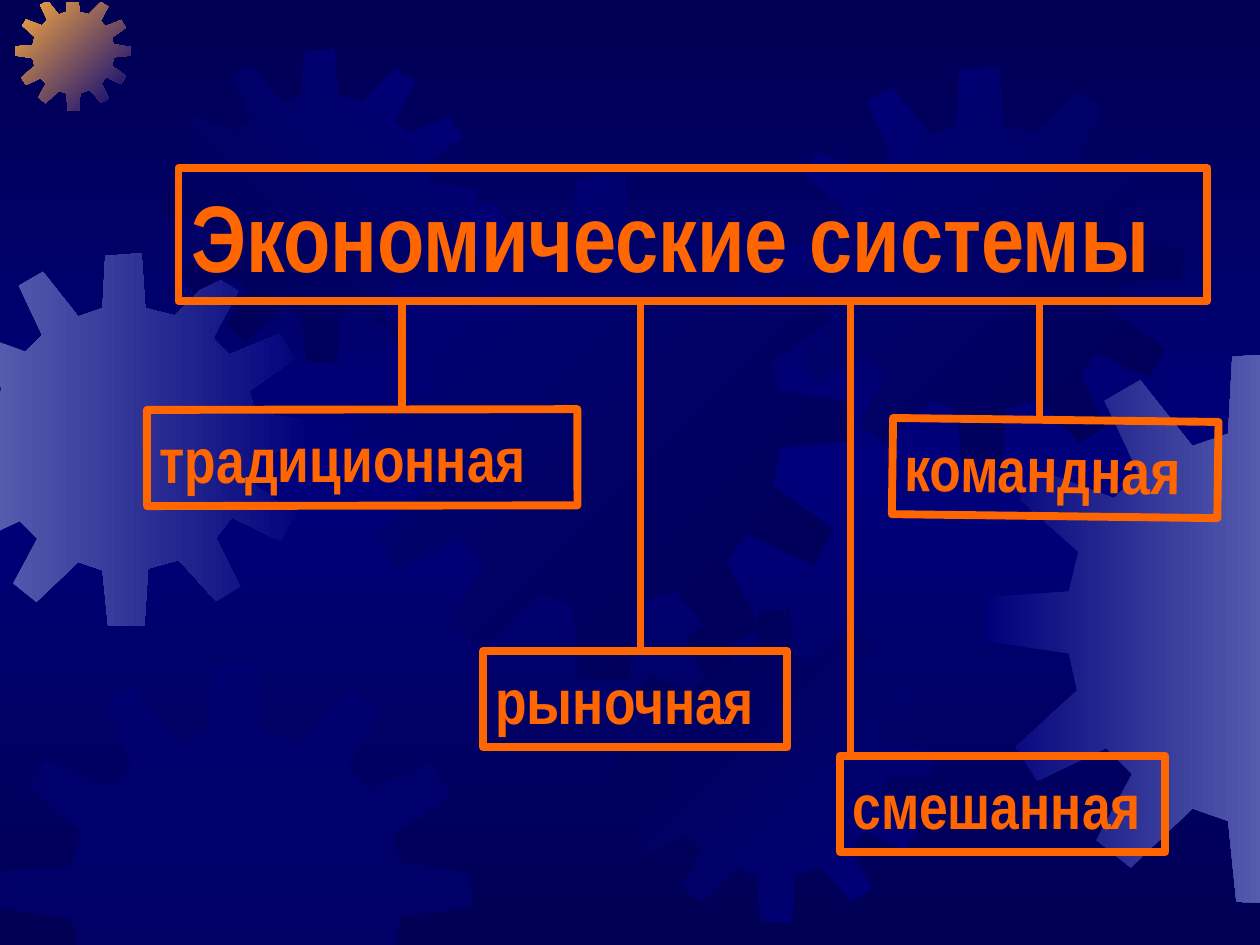
from copy import deepcopy

from lxml import etree
from pptx import Presentation
from pptx.dml.color import RGBColor
from pptx.enum import shapes, text
from pptx.oxml import ns
from pptx.util import Pt

COLORS = {"navy": "000054", "blue": "00007A", "mist": "555BAD",
          "amber": "FCAB40", "orange": "FF6600"}
FONT = "Arial Narrow"
LINE_WIDTH = 4.5
PAGE_BOUNDS = (-1, 1.5, 721, 543)

# Outline of a twelve-tooth gear on a grid of 401 by 401
GEAR_SIZE = 401
GEAR = [
    (255, 67), (223, 59), (219, 0), (180, 3), (177, 59), (151, 68),
    (113, 20), (87, 35), (112, 88), (94, 106), (38, 85), (25, 107),
    (68, 145), (61, 174), (1, 178), (0, 210), (61, 219), (67, 246),
    (22, 287), (38, 312), (88, 288), (107, 307), (81, 355), (106, 375),
    (151, 332), (177, 341), (183, 400), (222, 401), (226, 339), (259, 330),
    (299, 374), (325, 358), (299, 306), (316, 284), (368, 309), (384, 281),
    (336, 246), (342, 216), (401, 210), (400, 180), (341, 171), (335, 148),
    (383, 114), (367, 87), (313, 109), (296, 91), (323, 41), (297, 25),
]

# left, top, size, first colour, last colour, clockwise angle
GEARS = [
    (-35.5, 144.7, 213.1, "mist", "blue", 0),
    (8.6, -2.9, 66.2, "amber", "blue", 45),
    (93.6, 28.1, 178.6, "navy", "blue", 315),
    (199.4, 100.1, 289, "blue", "navy", 45),
    (0, 378, 269.3, "blue", None, 0),
    (353.5, 348.5, 178.6, "navy", "blue", 45),
    (445, 38.2, 230.4, "blue", "navy", 45),
    (563, 201.6, 314.6, "blue", "mist", 0),
]

TITLE_BOX = (102, 96, 588, 76)
# wording, box, rotation, x of the stem
BRANCHES = [
    ("традиционная", (84, 234, 246, 55), -0.1, 229.5),
    ("командная", (510, 240, 186, 55), 0.7, 594),
    ("рыночная", (276, 372, 174, 55), 0, 366),
    ("смешанная", (480, 432, 186, 55), 0, 486),
]


def rgb(name):
    return RGBColor.from_string(COLORS[name])


def clip(points, axis, limit, side):
    """Cut a polygon at one straight edge; side is 1 to keep larger values, -1 for smaller."""
    kept = []
    for start, end in zip(points[-1:] + points[:-1], points):
        start_in = (start[axis] - limit) * side >= 0
        end_in = (end[axis] - limit) * side >= 0
        if start_in != end_in:
            share = (limit - start[axis]) / (end[axis] - start[axis])
            kept.append(tuple(a + share * (b - a) for a, b in zip(start, end)))
        if end_in:
            kept.append(end)
    return kept


def fill_gradient(fill, names, angle):
    for stop, name in zip(fill.gradient_stops, names):
        stop.color.rgb = rgb(name)
    fill.gradient_angle = -angle % 360


def add_background(page):
    fill = page.background.fill
    fill.gradient()
    stops = page.element.find(".//" + ns.qn("a:gsLst"))
    stops.append(deepcopy(stops[-1]))
    for stop, position in zip(fill.gradient_stops, (0, 0.5, 1)):
        stop.position = position
    fill_gradient(fill, ("navy", "blue", "navy"), 90)


def add_gear(page, left, top, size, first, last, angle):
    scale = size / GEAR_SIZE
    points = [(left + x * scale, top + y * scale) for x, y in GEAR]
    for index, limit in enumerate(PAGE_BOUNDS):
        points = clip(points, index % 2, limit, 1 if index < 2 else -1)
    corners = [(Pt(x), Pt(y)) for x, y in points]
    builder = page.shapes.build_freeform(*corners[0])
    builder.add_line_segments(corners[1:], close=True)
    gear = builder.convert_to_shape()
    gear.shadow.inherit = False
    gear.line.fill.background()
    if last:
        gear.fill.gradient()
        fill_gradient(gear.fill, (first, last), angle)
    else:
        gear.fill.solid()
        gear.fill.fore_color.rgb = rgb(first)
        color = gear.element.spPr.find(".//" + ns.qn("a:srgbClr"))
        etree.SubElement(color, ns.qn("a:alpha"), val="50000")


def style_line(line):
    line.color.rgb = rgb("orange")
    line.width = Pt(LINE_WIDTH)


def format_label(shape, wording, box, size):
    shape.left, shape.top, shape.width, shape.height = map(Pt, box)
    style_line(shape.line)
    frame = shape.text_frame
    frame.text = wording
    frame.word_wrap = True
    frame.auto_size = text.MSO_AUTO_SIZE.NONE
    frame.vertical_anchor = text.MSO_ANCHOR.MIDDLE
    para = frame.paragraphs[0]
    para.alignment = text.PP_ALIGN.LEFT
    para.space_before = Pt(0)
    font = para.runs[0].font
    font.name, font.size, font.bold = FONT, Pt(size), True
    font.color.rgb = rgb("orange")


def add_branch(page, wording, box, rotation, stem_x):
    """Add a labelled box and the stem that hangs it from the title."""
    label = page.shapes.add_textbox(*map(Pt, box))
    format_label(label, wording, box, 36)
    label.rotation = rotation
    title_bottom = TITLE_BOX[1] + TITLE_BOX[3] + 2
    stem = page.shapes.add_connector(
        shapes.MSO_CONNECTOR.STRAIGHT,
        Pt(stem_x), Pt(title_bottom), Pt(stem_x), Pt(box[1]))
    style_line(stem.line)
    etree.SubElement(stem.element.spPr, ns.qn("a:effectLst"))


def main():
    deck = Presentation()
    deck.slide_width, deck.slide_height = Pt(720), Pt(540)
    page = deck.slides.add_slide(deck.slide_layouts[5])
    add_background(page)
    for gear in GEARS:
        add_gear(page, *gear)
    title = page.shapes.title
    format_label(title, "Экономические системы", TITLE_BOX, 54)
    title.element.getparent().append(title.element)
    for branch in BRANCHES:
        add_branch(page, *branch)
    deck.save("out.pptx")


if __name__ == "__main__":
    main()
